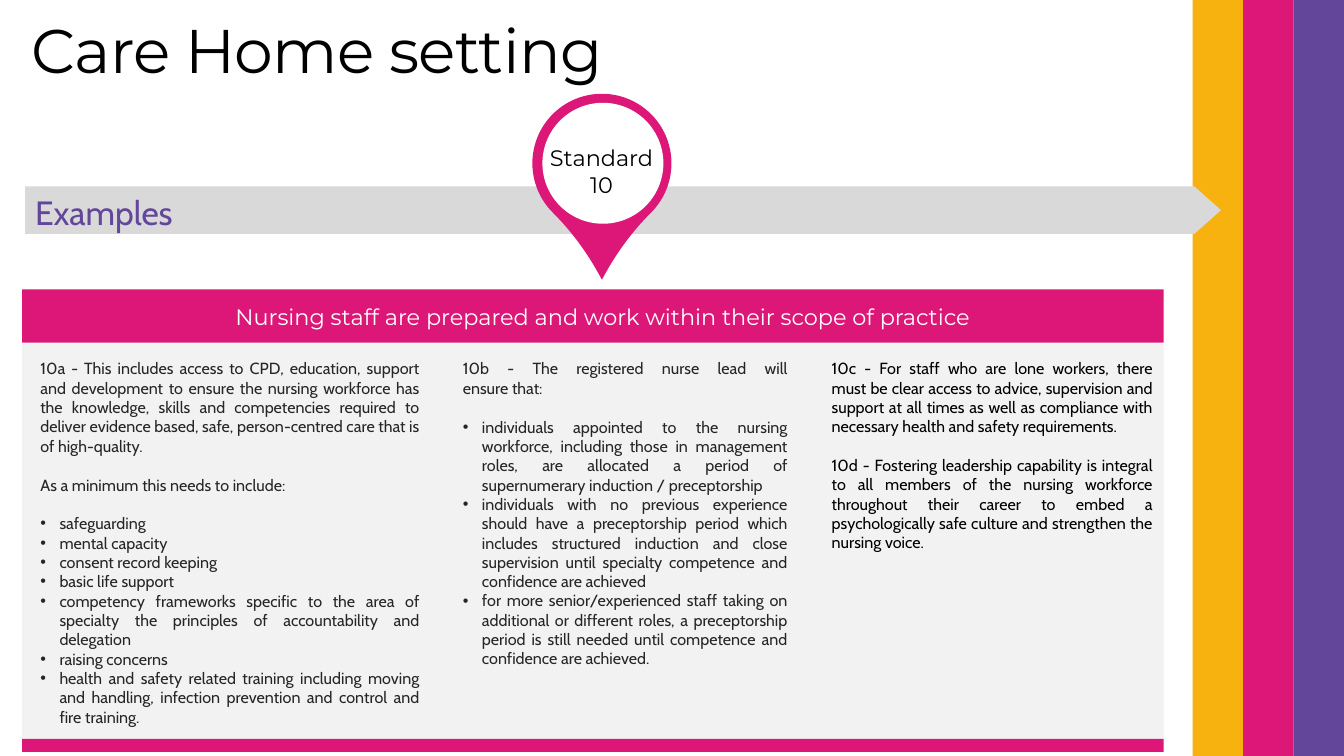
from lxml import etree
from pptx import Presentation
from pptx.dml.color import RGBColor
from pptx.enum.shapes import MSO_SHAPE
from pptx.enum.text import MSO_ANCHOR, MSO_AUTO_SIZE, PP_ALIGN
from pptx.oxml.ns import qn
from pptx.util import Inches, Pt

RECT, ARROW = MSO_SHAPE.RECTANGLE, MSO_SHAPE.RIGHT_ARROW
DROP, OVAL = MSO_SHAPE.TEAR, MSO_SHAPE.OVAL
LEFT, CENTER, JUSTIFY = PP_ALIGN.LEFT, PP_ALIGN.CENTER, PP_ALIGN.JUSTIFY
TOP, MIDDLE, BOTTOM = MSO_ANCHOR.TOP, MSO_ANCHOR.MIDDLE, MSO_ANCHOR.BOTTOM

PINK, PURPLE, YELLOW = "DD1778", "63469A", "F7B20F"
GREY, PALE, WHITE, BLACK, DARK = "D9D9D9", "F2F2F2", "FFFFFF", "000000", "262626"
HEADING_FONT, BODY_FONT = "Montserrat", "Cabin"

# Content
TITLE = "Care Home setting"
SECTION = "Examples"
MARKER = ["Standard", "10"]
STATEMENT = "Nursing staff are prepared and work within their scope of practice"

# Each paragraph: (kind, text); "gap" is a plain paragraph or bullet list set one line apart
PLAIN, BULLET = "plain", "bullet"
TRAINING = [
    (PLAIN, "10a - This includes access to CPD, education, support and development to "
            "ensure the nursing workforce has the knowledge, skills and competencies "
            "required to deliver evidence based, safe, person-centred care that is of "
            "high-quality."),
    (PLAIN, "As a minimum this needs to include:"),
    (BULLET, "safeguarding"),
    (BULLET, "mental capacity"),
    (BULLET, "consent record keeping"),
    (BULLET, "basic life support"),
    (BULLET, "competency frameworks specific to the area of specialty the principles of "
             "accountability and delegation"),
    (BULLET, "raising concerns"),
    (BULLET, "health and safety related training including moving and handling, infection "
             "prevention and control and fire training."),
]
INDUCTION = [
    (PLAIN, "10b - The registered nurse lead will\vensure that:"),
    (BULLET, "individuals appointed to the nursing workforce, including those in management "
             "roles, are allocated a period of supernumerary induction / preceptorship"),
    (BULLET, "individuals with no previous experience should have a preceptorship period "
             "which includes structured induction and close supervision until specialty "
             "competence and confidence are achieved"),
    (BULLET, "for more senior/experienced staff taking on additional or different roles, a "
             "preceptorship period is still needed until competence and confidence are "
             "achieved."),
]
SUPPORT = [
    (PLAIN, "10c - For staff who are lone workers, there must be clear access to advice, "
            "supervision and support at all times as well as compliance with necessary "
            "health and safety requirements."),
    (PLAIN, "10d - Fostering leadership capability is integral to all members of the nursing "
            "workforce throughout their career to embed a psychologically safe culture and "
            "strengthen the nursing voice."),
]

# Layout
STRIPES, STRIPE_LEFT, STRIPE_WIDTH = [YELLOW, PINK, PURPLE], 11.83, 0.5
PANEL_LEFT, PANEL_WIDTH = 0.22, 11.32
COLUMN_TOP, COLUMN_HEIGHT = 3.51, 3.78
BULLET_INDENT, LINE_GAP = 0.19, 13.9

# (preset, box, fill, adjustments, rotation), back to front
SHAPES = [(RECT, (STRIPE_LEFT + i * STRIPE_WIDTH, 0, STRIPE_WIDTH, 7.5), color, [], 0)
          for i, color in enumerate(STRIPES)] + [
    (ARROW, (0.25, 1.85, 11.86, 0.47), GREY, [1, 0.56], 0),
    (DROP, (5.28, 0.93, 1.38, 1.38), PINK, [1.184], 135),
    (OVAL, (5.38, 1.02, 1.2, 1.2), WHITE, [], 0),
    (RECT, (PANEL_LEFT, 2.87, PANEL_WIDTH, 0.53), PINK, [], 0),
    (RECT, (PANEL_LEFT, 3.41, PANEL_WIDTH, 3.98), PALE, [], 0),
    (RECT, (PANEL_LEFT, 7.33, PANEL_WIDTH, 0.13), PINK, [], 0),
]


def rgb(color):
    return RGBColor.from_string(color)


def add_filled(slide, preset, box, fill, adjustments, rotation):
    shape = slide.shapes.add_shape(preset, *map(Inches, box))
    shape.shadow.inherit = False
    shape.fill.solid()
    shape.fill.fore_color.rgb = rgb(fill)
    shape.line.fill.background()
    shape.rotation = rotation
    for i, value in enumerate(adjustments):
        shape.adjustments[i] = value


def set_bullet(paragraph, is_bullet):
    properties = paragraph._p.get_or_add_pPr()
    indent = Inches(BULLET_INDENT) if is_bullet else 0
    properties.set("marL", str(indent))
    properties.set("indent", str(-indent))
    if is_bullet:
        font = etree.SubElement(properties, qn("a:buFont"))
        font.set("typeface", "Arial")
        etree.SubElement(properties, qn("a:buChar")).set("char", "•")
    else:
        etree.SubElement(properties, qn("a:buNone"))


def write(shape, box, paragraphs, size, font, color, align,
          anchor=TOP, wrap=True, line_spacing=1):
    """Place a text shape and fill it; each new block of text starts one line lower."""
    for name, value in zip(("left", "top", "width", "height"), box):
        setattr(shape, name, Inches(value))
    frame = shape.text_frame
    frame_format = {"auto_size": MSO_AUTO_SIZE.NONE, "word_wrap": wrap,
                    "vertical_anchor": anchor}
    for name, value in frame_format.items():
        setattr(frame, name, value)
    previous = None
    for i, (kind, text) in enumerate(paragraphs):
        paragraph = frame.paragraphs[0] if i == 0 else frame.add_paragraph()
        paragraph.text = text
        new_block = i > 0 and BULLET not in (previous,) and align == JUSTIFY
        paragraph_format = {"alignment": align, "line_spacing": line_spacing,
                            "space_before": Pt(LINE_GAP if new_block else 0),
                            "space_after": Pt(0)}
        for name, value in paragraph_format.items():
            setattr(paragraph, name, value)
        set_bullet(paragraph, kind == BULLET)
        for run in paragraph.runs:
            for name, value in {"size": Pt(size), "name": font}.items():
                setattr(run.font, name, value)
            run.font.color.rgb = rgb(color)
        previous = kind


def add_text(slide, box, *args, **options):
    write(slide.shapes.add_textbox(*map(Inches, box)), box, *args, **options)


def main():
    deck = Presentation()
    deck.slide_width, deck.slide_height = Inches(13.33), Inches(7.5)
    slide = deck.slides.add_slide(deck.slide_layouts[3])
    title, training, induction = slide.placeholders

    # Stripes, arrow, marker and panel
    for item in SHAPES:
        add_filled(slide, *item)

    # Title
    write(title, (0.21, 0.02, 10.6, 0.89), [(PLAIN, TITLE)], 44, HEADING_FONT, BLACK,
          LEFT, anchor=BOTTOM, line_spacing=0.9)
    title.text_frame.paragraphs[0].runs[0].font._element.set("spc", "-50")

    # Labels
    add_text(slide, (5.34, 1.38, 1.25, 0.64), [(PLAIN, line) for line in MARKER],
             16, HEADING_FONT, BLACK, CENTER, anchor=MIDDLE, wrap=False)
    add_text(slide, (0.73, 2.96, 10.5, 0.37), [(PLAIN, STATEMENT)],
             16, HEADING_FONT, WHITE, CENTER)
    add_text(slide, (0.25, 1.85, 1.76, 0.5), [(PLAIN, SECTION)],
             24, BODY_FONT, PURPLE, LEFT, wrap=False)

    # Columns, with the list placeholders brought in front of the panel
    for column, left, width, paragraphs in [(training, 0.3, 3.96, TRAINING),
                                            (induction, 4.49, 3.42, INDUCTION)]:
        slide.shapes._spTree.append(column._element)
        write(column, (left, COLUMN_TOP, width, COLUMN_HEIGHT), paragraphs,
              11.5, BODY_FONT, DARK, JUSTIFY)
    add_text(slide, (8.15, COLUMN_TOP, 3.38, 2.23), SUPPORT,
             11.5, BODY_FONT, BLACK, JUSTIFY)

    deck.save("out.pptx")


if __name__ == "__main__":
    main()
